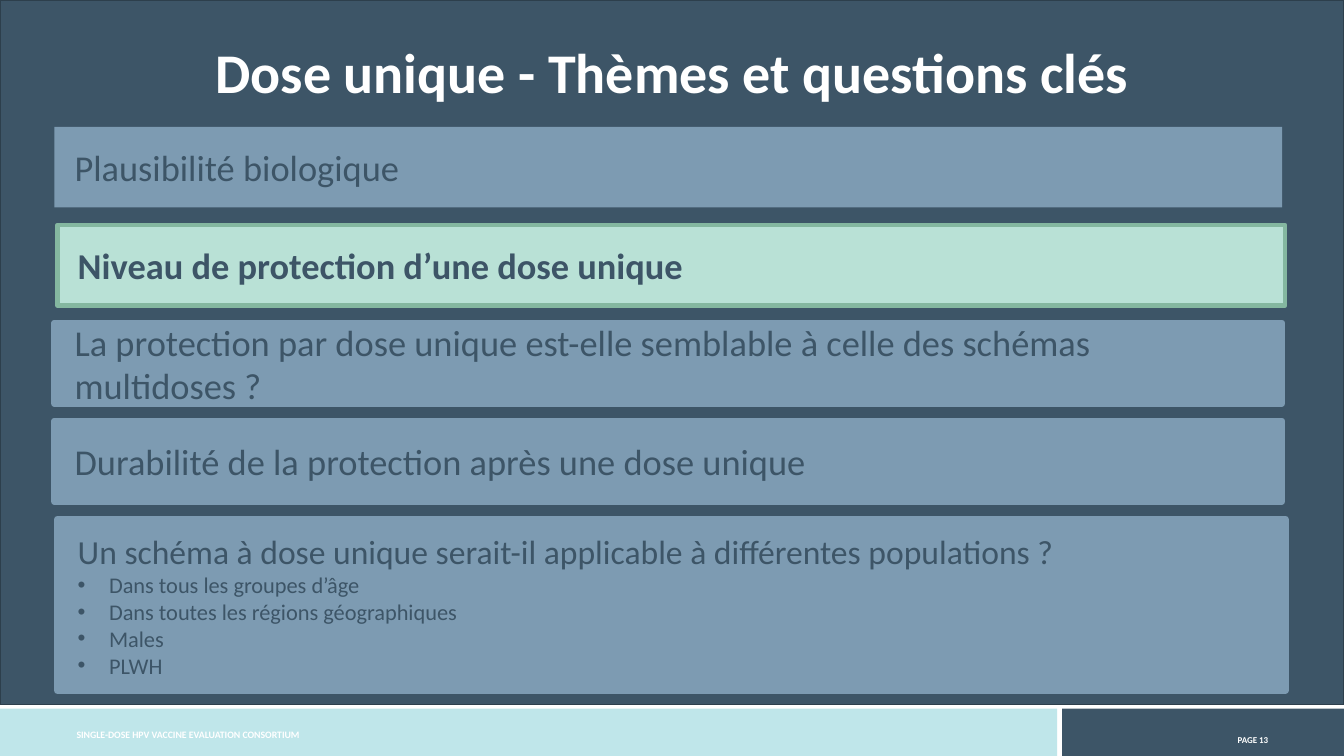
"""Build the slide on the key themes and questions of a single dose."""
import pptx
import pptx.util
import pptx.dml.color
import pptx.enum.shapes
import pptx.enum.text
import lxml.etree

Cm, Pt = pptx.util.Cm, pptx.util.Pt
ALIGN = pptx.enum.text.PP_ALIGN
ANCHOR = pptx.enum.text.MSO_ANCHOR
FIT = pptx.enum.text.MSO_AUTO_SIZE

HUES = {"navy": "3D5567", "edge": "2D3F4C", "blue": "7D9BB2", "mint": "B9E1D6",
        "green": "84B7A0", "aqua": "BFE6EA", "white": "FFFFFF"}
TITLE = "Dose unique - Thèmes et questions clés"
FOOTER = "SINGLE-DOSE HPV VACCINE EVALUATION CONSORTIUM"
PAGE = "PAGE 13"
CARDS = [
    {"text": "Plausibilité biologique", "left": 1.37},
    {"text": "Niveau de protection d’une dose unique", "left": 1.45,
     "fill": "mint", "line": "green", "width": 3, "bold": True},
    {"text": "La protection par dose unique est-elle semblable à celle des "
             "schémas multidoses ?", "left": 1.37, "line": "blue", "width": 4.5},
    {"text": "Durabilité de la protection après une dose unique",
     "left": 1.37, "line": "blue", "width": 4.5},
    {"text": "Un schéma à dose unique serait-il applicable à différentes "
             "populations ?", "left": 1.45, "line": "blue", "width": 5,
     "size": 24, "high": 4.32,
     "items": ["Dans tous les groupes d’âge",
               "Dans toutes les régions géographiques", "Males", "PLWH"]},
]
TOP, STEP, WIDE, HIGH = 3.2, 2.47, 30.94, 2.03
BANDS = [("aqua", 0, 17.86, 26.64, 1.19, None),
         ("navy", 26.77, 17.86, 7.1, 1.19, None),
         ("navy", 0, 0, 33.87, 17.75, "edge")]


def color(name):
    """Return the named colour."""
    return pptx.dml.color.RGBColor.from_string(HUES[name])


def style(para, size, hue, bold=False):
    """Set the font of a paragraph."""
    font = para.font
    font.name, font.size, font.bold = "Calibri", Pt(size), bold
    font.color.rgb = color(hue)


def panel(slide, fill, left, top, wide, high, line=None, width=1):
    """Add a flat rectangle."""
    shape = slide.shapes.add_shape(pptx.enum.shapes.MSO_SHAPE.RECTANGLE,
                                   Cm(left), Cm(top), Cm(wide), Cm(high))
    shape.shadow.inherit = False
    shape.fill.solid()
    shape.fill.fore_color.rgb = color(fill)
    if line:
        shape.line.color.rgb = color(line)
        shape.line.width = Pt(width)
    else:
        shape.line.fill.background()
    return shape


def bullet(para):
    """Give a paragraph a hanging round bullet."""
    props = para._p.get_or_add_pPr()
    props.set("marL", str(Cm(0.79)))
    props.set("indent", str(-Cm(0.79)))
    space = props.nsmap["a"]
    mark = lxml.etree.SubElement(props, f"{{{space}}}buFont")
    mark.set("typeface", "Arial")
    mark = lxml.etree.SubElement(props, f"{{{space}}}buChar")
    mark.set("char", "•")


def add_card(slide, card, top):
    """Add one theme with its optional list."""
    shape = panel(slide, card.get("fill", "blue"), card["left"], top, WIDE,
                  card.get("high", HIGH), card.get("line"), card.get("width"))
    frame = shape.text_frame
    frame.word_wrap = True
    frame.vertical_anchor = ANCHOR.MIDDLE
    frame.margin_left = Cm(0.51)
    head = frame.paragraphs[0]
    head.text = card["text"]
    head.alignment = ALIGN.LEFT
    style(head, card.get("size", 26), "navy", card.get("bold", False))
    for item in card.get("items", []):
        para = frame.add_paragraph()
        para.text = item
        para.alignment = ALIGN.LEFT
        bullet(para)
        style(para, 16, "navy")


def add_note(slide, text, left, top, wide, size, align):
    """Add a line of footer text and return its paragraph."""
    box = slide.shapes.add_textbox(Cm(left), Cm(top), Cm(wide), Cm(0.56))
    frame = box.text_frame
    frame.word_wrap = True
    para = frame.paragraphs[0]
    para.text = text
    para.alignment = align
    style(para, size, "white", True)
    return para


def add_title(slide):
    """Fill the title and bring it in front of the bands."""
    title = slide.shapes.title
    title.left, title.top = Cm(0.23), Cm(1.02)
    title.width, title.height = Cm(33.4), Cm(2.41)
    frame = title.text_frame
    frame.text = TITLE
    frame.vertical_anchor = ANCHOR.TOP
    frame.auto_size = FIT.NONE
    para = frame.paragraphs[0]
    para.alignment = ALIGN.CENTER
    para.line_spacing = 0.9
    style(para, 40, "white", True)
    title.element.getparent().append(title.element)


def main():
    """Build and save the slide."""
    deck = pptx.Presentation()
    deck.slide_width, deck.slide_height = Cm(33.87), Cm(19.05)
    slide = deck.slides.add_slide(deck.slide_layouts[5])
    for band in BANDS:
        panel(slide, *band)
    add_note(slide, FOOTER, 1.68, 18.24, 11.05, 7, ALIGN.LEFT)
    page = add_note(slide, PAGE, 28.12, 18.34, 4.09, 11, ALIGN.RIGHT)
    page.runs[0]._r.get_or_add_rPr().set("baseline", "30000")
    add_title(slide)
    for index, card in enumerate(CARDS):
        add_card(slide, card, TOP + index * STEP)
    deck.save("out.pptx")


if __name__ == "__main__":
    main()
